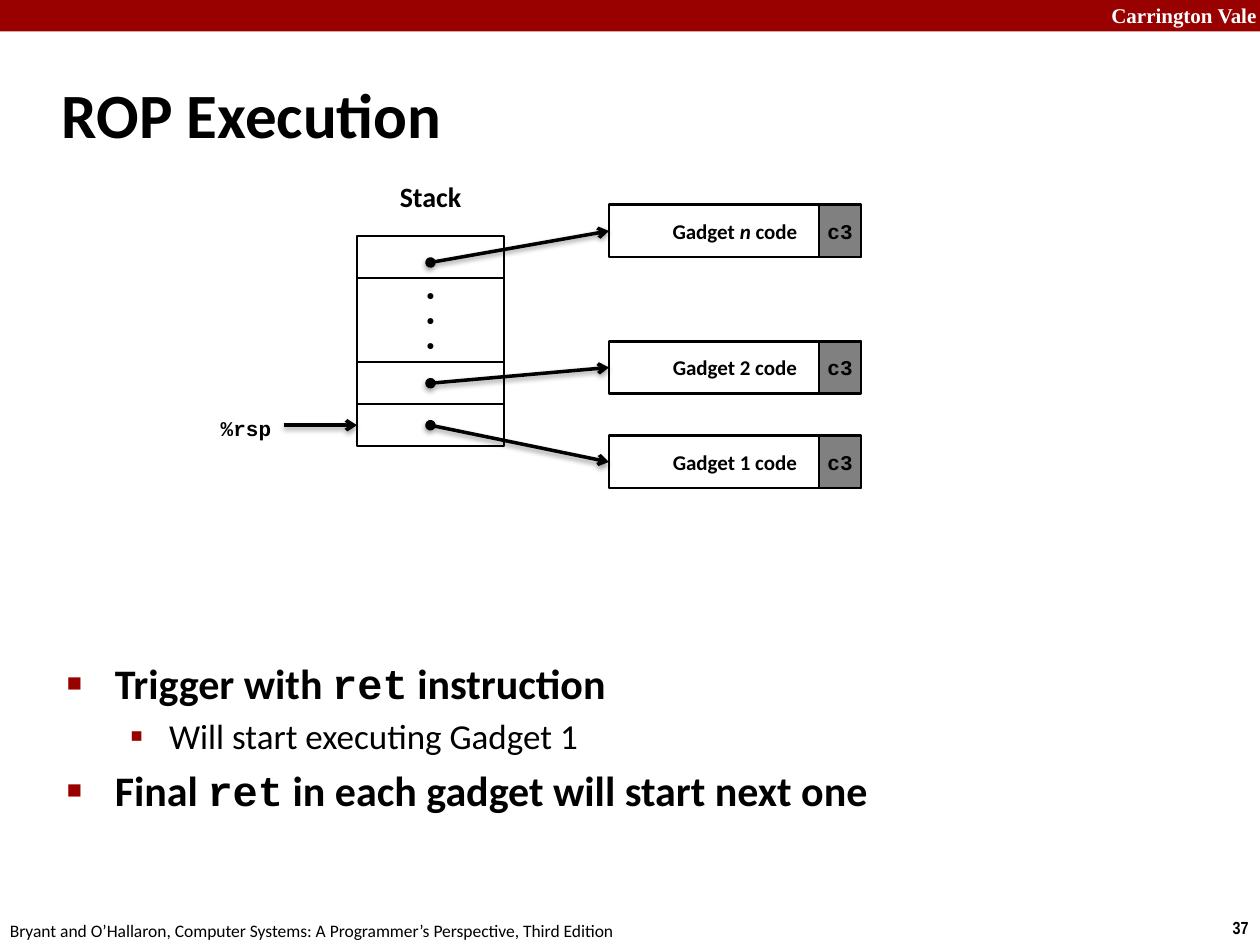
from lxml.etree import SubElement
from pptx import Presentation
from pptx.dml.color import RGBColor
from pptx.enum.shapes import MSO_CONNECTOR, MSO_SHAPE
from pptx.enum.text import MSO_ANCHOR, PP_ALIGN
from pptx.oxml.ns import qn
from pptx.util import Inches, Pt

RED = RGBColor(0x99, 0x00, 0x00)
BLACK = RGBColor(0x00, 0x00, 0x00)
GRAY = RGBColor(0x80, 0x80, 0x80)
WHITE = RGBColor(0xFF, 0xFF, 0xFF)
UNIT = Inches(1) // 12
SANS, MONO = "Calibri", "Courier New"
LEFT, MID, RIGHT = PP_ALIGN.LEFT, PP_ALIGN.CENTER, PP_ALIGN.RIGHT
TIGHT = dict(margin_left=0, margin_right=0)
FLAT = dict(margin_top=0, margin_bottom=0, word_wrap=False)


def grid(*cells):
    """Turn grid cells of a twelfth of an inch into lengths."""
    return [round(cell * UNIT) for cell in cells]


def node(root, tag, **vals):
    """Add an XML child with its attributes."""
    return SubElement(root, qn(tag), {key: str(val) for key, val in vals.items()})


def apply(item, form):
    """Set each format value on an item."""
    for key, val in form.items():
        setattr(item, key, val)


def fill_para(para, runs, size, font=SANS, bold=True, color=BLACK, align=LEFT):
    """Write runs, each a plain text or a text with its own format."""
    para.alignment = align
    for part in runs:
        text, form = (part, {}) if isinstance(part, str) else part
        run = para.add_run()
        run.text = text
        apply(run.font, dict(size=Pt(size), name=font, bold=bold) | form)
        run.font.color.rgb = color


def add_label(slide, box, runs, size, anchor=MSO_ANCHOR.TOP, wrap=True, **form):
    """Place a text box with one paragraph."""
    frame = slide.shapes.add_textbox(*grid(*box)).text_frame
    apply(frame, dict(word_wrap=wrap, vertical_anchor=anchor))
    fill_para(frame.paragraphs[0], runs, size, **form)


def add_box(slide, box, fill=None, width=1, paras=(), frame=None, font=SANS):
    """Place a rectangle with centred lines of text."""
    shape = slide.shapes.add_shape(MSO_SHAPE.RECTANGLE, *grid(*box))
    shape.shadow.inherit = False
    if fill is None:
        shape.fill.background()
    else:
        shape.fill.solid()
        shape.fill.fore_color.rgb = fill
    if width:
        shape.line.color.rgb = BLACK
        shape.line.width = Pt(width)
    else:
        shape.line.fill.background()
    body = shape.text_frame
    apply(body, dict(word_wrap=True, vertical_anchor=MSO_ANCHOR.MIDDLE) | (frame or {}))
    for num, runs in enumerate(paras):
        para = body.add_paragraph() if num else body.paragraphs[0]
        fill_para(para, runs, 12, font, align=MID)


def add_arrow(slide, ends, dot=True):
    """Draw a shadowed arrow, with a dot at its start if asked."""
    line = slide.shapes.add_connector(MSO_CONNECTOR.STRAIGHT, *grid(*ends))
    line.line.color.rgb = BLACK
    line.line.width = Pt(2)
    props = line.line._get_or_add_ln()
    if dot:
        node(props, "a:headEnd", type="oval")
    node(props, "a:tailEnd", type="arrow")
    glow = node(line._element.spPr, "a:effectLst")
    cast = node(glow, "a:outerShdw", blurRad=Pt(3.1), dist=Pt(1.6),
                dir=5400000, rotWithShape=0)
    tone = node(cast, "a:srgbClr", val=BLACK)
    node(tone, "a:alpha", val=38000)


def add_frame(slide, wide, high):
    """Place the top band, the footer and the page number."""
    add_box(slide, (0, 0, wide, 3), RED, 0)
    add_label(slide, (wide - 16.3, -0.36, 17.16, 3.6), ["Carrington Vale"], 12,
              font="Times New Roman", color=WHITE, align=RIGHT)
    add_label(slide, (wide - 4, high - 3.24, 4.1, 3.24), ["37"], 10, wrap=False,
              font="Arial Narrow", align=RIGHT)
    add_label(slide, (-0.24, high - 3, 61, 3.24), [
        "Bryant and O’Hallaron, Computer Systems: A Programmer’s Perspective, "
        "Third Edition"], 10, wrap=False, bold=False)


def add_stack(slide, left, top, wide, row):
    """Place the stack and its pointer, and return the slot centres."""
    dots = [["•"]] * 3
    y, mids = top, []
    for span, paras in ((1, ()), (2, dots), (1, ()), (1, ())):
        add_box(slide, (left, y, wide, span * row), paras=paras, frame=FLAT, font="Arial")
        if span == 1:
            mids.append(y + row / 2)
        y += span * row
    add_label(slide, (left, top - 6, wide, 4.4), ["Stack"], 16, align=MID)
    add_label(slide, (left - 21, mids[-1] - 1.75, wide, row), ["%rsp"], 12,
              MSO_ANCHOR.MIDDLE, font=MONO, align=RIGHT)
    add_arrow(slide, (left - 7, mids[-1], left, mids[-1]), False)
    return mids


def add_gadget(slide, left, top, wide, high, runs):
    """Place a gadget with its return byte at the right."""
    tail = wide / 6
    add_box(slide, (left + wide - tail, top, tail, high), GRAY, paras=[["c3"]],
            frame=TIGHT, font=MONO)
    add_box(slide, (left, top, wide, high), width=1.5, paras=[runs])


def add_diagram(slide, left, top):
    """Place the stack, the gadgets and the arrows between them."""
    wide, high, row = 14, 5, 4
    mids = add_stack(slide, left, top, wide, row)
    mids[0] += 0.5
    names = (["Gadget ", ("n", dict(italic=True)), " code"],
             ["Gadget 2 code"], ["Gadget 1 code"])
    for mid, drop, runs in zip(mids, (-3, 10, 19), names):
        add_gadget(slide, left + 24, top + drop, 24, high, runs)
        add_arrow(slide, (left + wide / 2, mid, left + 24, top + drop + high / 2))


def add_points(slide, *box):
    """Place the bulleted points."""
    frame = slide.shapes.add_textbox(*grid(*box)).text_frame
    frame.word_wrap = True
    ret = ("ret", dict(name=MONO))
    points = ((0, ["Trigger with ", ret, " instruction"]),
              (1, ["Will start executing Gadget 1"]),
              (0, ["Final ", ret, " in each gadget will start next one"]))
    looks = ((24, 0.38, 0.38, "■", 60), (20, 0.81, 0.31, "▪", 110))
    for num, (level, runs) in enumerate(points):
        para = frame.add_paragraph() if num else frame.paragraphs[0]
        size, edge, hang, mark, scale = looks[level]
        fill_para(para, runs, size, bold=level == 0)
        apply(para, dict(level=level, space_before=Pt(size * 0.2)))
        props = para._p.get_or_add_pPr()
        props.set("marL", str(Inches(edge)))
        props.set("indent", str(-Inches(hang)))
        node(node(props, "a:buClr"), "a:srgbClr", val=RED)
        node(props, "a:buSzPct", val=scale * 1000)
        node(props, "a:buFont", typeface="Arial")
        node(props, "a:buChar", char=mark)


def main():
    """Build the slide and save it."""
    deck = Presentation()
    wide, high = 120, 90
    deck.slide_width, deck.slide_height = grid(wide, high)
    slide = deck.slides.add_slide(deck.slide_layouts[6])
    add_frame(slide, wide, high)
    add_label(slide, (4.7, 5.75, 99.6, 10), ["ROP Execution"], 36, MSO_ANCHOR.MIDDLE)
    add_points(slide, 5.2, 62, 103.7, 21)
    add_diagram(slide, 34, 22.5)
    deck.save("out.pptx")


if __name__ == "__main__":
    main()
